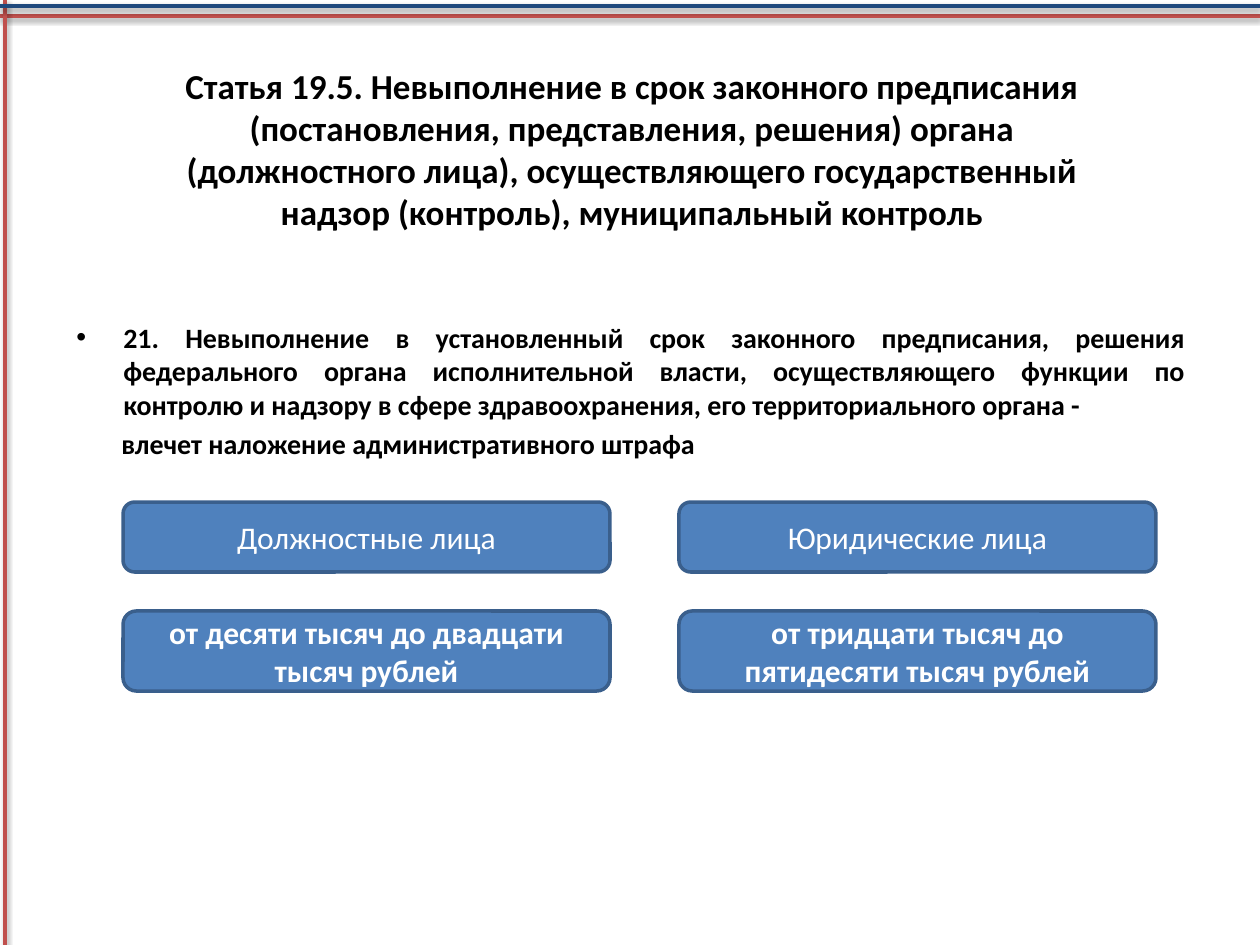
from lxml.etree import SubElement
from pptx import Presentation
from pptx.dml.color import RGBColor
from pptx.enum.shapes import MSO_CONNECTOR, MSO_SHAPE
from pptx.enum.text import MSO_ANCHOR, MSO_AUTO_SIZE, PP_ALIGN
from pptx.oxml.ns import qn
from pptx.util import Pt

EMU_PER_PX = 914400 / 126
PAGE_WIDTH, PAGE_HEIGHT = 1260, 945
FONT = "Calibri"
BLACK = RGBColor(0x00, 0x00, 0x00)
WHITE = RGBColor(0xFF, 0xFF, 0xFF)
RED = RGBColor(0xC0, 0x50, 0x4D)
NAVY = RGBColor(0x1F, 0x49, 0x7D)
BLUE = RGBColor(0x4F, 0x81, 0xBD)
BLUE_EDGE = RGBColor(0x3A, 0x5F, 0x8C)

TITLE = (
    "Статья 19.5. Невыполнение в срок законного предписания "
    "(постановления, представления, решения) органа (должностного лица), "
    "осуществляющего государственный надзор (контроль), муниципальный контроль"
)
OFFENCE = (
    "21. Невыполнение в установленный срок законного предписания, решения "
    "федерального органа исполнительной власти, осуществляющего функции по "
    "контролю и надзору в сфере здравоохранения, его территориального органа -"
)
PENALTY = "влечет наложение административного штрафа"
COLUMNS = [
    (123, 487, "Должностные лица", "от десяти тысяч до двадцати тысяч рублей"),
    (679, 477, "Юридические лица", "от тридцати тысяч до пятидесяти тысяч рублей"),
]


def px(length):
    return round(length * EMU_PER_PX)


def add_text(para, text, size, color, bold, align):
    para.alignment = align
    span = para.add_run()
    span.text = text
    span.font.name = FONT
    span.font.size = Pt(size)
    span.font.bold = bold
    span.font.color.rgb = color


def add_rule(page, start, end, color):
    rule = page.shapes.add_connector(
        MSO_CONNECTOR.STRAIGHT, *[px(value) for value in start + end])
    rule.line.color.rgb = color
    rule.line.width = Pt(2)
    effects = SubElement(rule._element.spPr, qn("a:effectLst"))
    shadow = SubElement(effects, qn("a:outerShdw"), blurRad=str(Pt(3.1)),
                        dist=str(Pt(1.6)), dir="5400000", rotWithShape="0")
    shade = SubElement(shadow, qn("a:srgbClr"), val=str(BLACK))
    SubElement(shade, qn("a:alpha"), val="38000")


def set_title(page):
    title = page.shapes.title
    title.left, title.top, title.width, title.height = map(px, (155, 55, 954, 187))
    frame = title.text_frame
    frame.word_wrap = True
    frame.auto_size = MSO_AUTO_SIZE.NONE
    frame.vertical_anchor = MSO_ANCHOR.MIDDLE
    add_text(frame.paragraphs[0], TITLE, 20, BLACK, True, PP_ALIGN.CENTER)


def set_indent(para, margin, first_line):
    properties = para._p.get_or_add_pPr()
    properties.set("marL", str(px(margin)))
    properties.set("indent", str(px(first_line)))
    return properties


def add_body(page):
    box = page.shapes.add_textbox(px(64), px(314), px(1134), px(580))
    frame = box.text_frame
    frame.word_wrap = True
    offence = frame.paragraphs[0]
    properties = set_indent(offence, 47, -47)
    SubElement(properties, qn("a:buFont"), typeface="Arial")
    SubElement(properties, qn("a:buChar"), char="•")
    add_text(offence, OFFENCE, 16, BLACK, True, PP_ALIGN.JUSTIFY)
    penalty = frame.add_paragraph()
    set_indent(penalty, 45, 0)
    penalty.space_before = Pt(3.2)
    add_text(penalty, PENALTY, 16, BLACK, True, PP_ALIGN.JUSTIFY)


def add_panel(page, left, top, width, height, text, bold):
    panel = page.shapes.add_shape(
        MSO_SHAPE.ROUNDED_RECTANGLE, px(left), px(top), px(width), px(height))
    panel.shadow.inherit = False
    panel.fill.solid()
    panel.fill.fore_color.rgb = BLUE
    panel.line.color.rgb = BLUE_EDGE
    panel.line.width = Pt(2)
    frame = panel.text_frame
    frame.word_wrap = True
    frame.vertical_anchor = MSO_ANCHOR.MIDDLE
    add_text(frame.paragraphs[0], text, 18, WHITE, bold, PP_ALIGN.CENTER)


def main():
    deck = Presentation()
    deck.slide_width, deck.slide_height = px(PAGE_WIDTH), px(PAGE_HEIGHT)
    page = deck.slides.add_slide(deck.slide_layouts[5])
    add_rule(page, (PAGE_WIDTH, 16), (0, 16), RED)
    add_rule(page, (5, 0), (5, PAGE_HEIGHT), RED)
    add_rule(page, (0, 6), (PAGE_WIDTH, 6), NAVY)
    add_body(page)
    set_title(page)
    for left, width, offender, fine in COLUMNS:
        add_panel(page, left, 502, width, 70, offender, False)
        add_panel(page, left, 611, width, 80, fine, True)
    deck.save("out.pptx")


if __name__ == "__main__":
    main()
